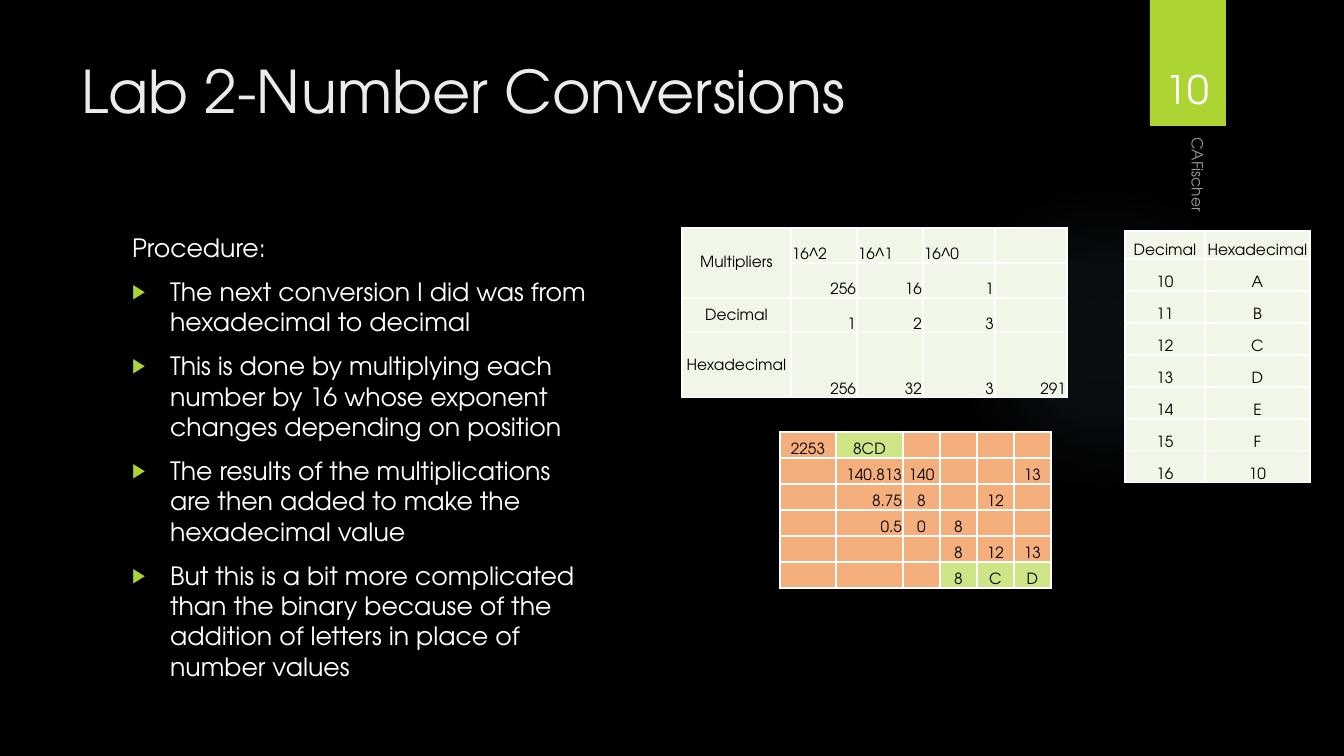
import dataclasses

import lxml.etree
import pptx
import pptx.dml.color
import pptx.enum.shapes
import pptx.enum.text
import pptx.oxml
import pptx.oxml.ns
import pptx.util

TITLE = "Lab 2-Number Conversions"
LEAD = "Procedure:"
STEPS = [
    "The next conversion I did was from hexadecimal to decimal",
    "This is done by multiplying each number by 16 whose exponent changes depending on position",
    "The results of the multiplications are then added to make the hexadecimal value",
    "But this is a bit more complicated than the binary because of the addition of letters in place of number values",
]
AUTHOR = "CAFischer"
PAGE_NUMBER = "10"


@dataclasses.dataclass(frozen=True)
class Theme:
    font: str = "TeX Gyre Adventor"
    background: str = "000000"
    title: str = "EBEBEB"
    text: str = "FFFFFF"
    accent: str = "ACD433"
    glow: str = "7AC4F0"
    cell_text: str = "000000"
    cell_border: str = "FFFFFF"
    pale: str = "F1F7E8"
    orange: str = "F5AF7C"
    highlight: str = "CDE585"
    title_size: int = 42
    number_size: int = 28
    body_size: int = 18
    small_size: int = 11


THEME = Theme()

TABLES = [
    {
        "left": 682, "top": 228,
        "columns": [109, 66, 66, 72, 72], "rows": [35, 35, 35, 65],
        "fill": THEME.pale, "highlights": [], "merges": [((0, 0), (1, 0))],
        "alignment": ["cllll", "crrrr", "crrrr", "crrrr"],
        "middle_columns": [0],
        "cells": [
            ["Multipliers", "16^2", "16^1", "16^0", ""],
            ["", "256", "16", "1", ""],
            ["Decimal", "1", "2", "3", ""],
            ["Hexadecimal", "256", "32", "3", "291"],
        ],
    },
    {
        "left": 1125, "top": 231,
        "columns": [80, 105], "rows": [28] + [32] * 7,
        "fill": THEME.pale, "highlights": [], "merges": [],
        "alignment": ["cc"] * 8,
        "middle_columns": [],
        "cells": [
            ["Decimal", "Hexadecimal"],
            ["10", "A"],
            ["11", "B"],
            ["12", "C"],
            ["13", "D"],
            ["14", "E"],
            ["15", "F"],
            ["16", "10"],
        ],
    },
    {
        "left": 780, "top": 432,
        "columns": [56, 67] + [37] * 4, "rows": [26] * 6,
        "fill": THEME.orange,
        "highlights": [(0, 1), (5, 3), (5, 4), (5, 5)], "merges": [],
        "alignment": ["cccccc"] + ["crcccc"] * 5,
        "middle_columns": [],
        "cells": [
            ["2253", "8CD", "", "", "", ""],
            ["", "140.813", "140", "", "", "13"],
            ["", "8.75", "8", "", "12", ""],
            ["", "0.5", "0", "8", "", ""],
            ["", "", "", "8", "12", "13"],
            ["", "", "", "8", "C", "D"],
        ],
    },
]

PIXELS_PER_INCH = 100.8
ALIGN = pptx.enum.text.PP_ALIGN
ANCHOR = pptx.enum.text.MSO_ANCHOR
SHAPE = pptx.enum.shapes.MSO_SHAPE
ALIGNMENTS = {"l": ALIGN.LEFT, "c": ALIGN.CENTER, "r": ALIGN.RIGHT}
qn = pptx.oxml.ns.qn


def px(length):
    return pptx.util.Emu(round(length * 914400 / PIXELS_PER_INCH))


def rgb(color):
    return pptx.dml.color.RGBColor.from_string(color)


def add_element(parent, tag, **attributes):
    return lxml.etree.SubElement(parent, qn(tag), attributes)


def place(shape, left, top, width, height):
    shape.left, shape.top, shape.width, shape.height = map(px, (left, top, width, height))


def format_runs(paragraph, size, color):
    for run in paragraph.runs:
        run.font.name = THEME.font
        run.font.size = pptx.util.Pt(size)
        run.font.color.rgb = rgb(color)


def add_plain_shape(slide, kind, *box):
    shape = slide.shapes.add_shape(kind, *map(px, box))
    shape.shadow.inherit = False
    shape.line.fill.background()
    return shape


def add_glow(slide):
    glow = add_plain_shape(slide, SHAPE.OVAL, 949, 184, 310, 310)
    gradient = pptx.oxml.parse_xml(
        f'<a:gradFill {pptx.oxml.ns.nsdecls("a")} rotWithShape="1"><a:gsLst/></a:gradFill>')
    for position, opacity in [(0, 7), (36, 6), (69, 0), (100, 0)]:
        stop = add_element(gradient[0], "a:gs", pos=str(position * 1000))
        color = add_element(stop, "a:srgbClr", val=THEME.glow)
        add_element(color, "a:alpha", val=str(opacity * 1000))
    circle = add_element(gradient, "a:path", path="circle")
    add_element(circle, "a:fillToRect", l="50000", t="50000", r="50000", b="50000")
    glow._element.spPr.find(qn("a:prstGeom")).addnext(gradient)


def add_label(slide, text, size, alignment, *box):
    label = slide.shapes.add_textbox(*map(px, box))
    frame = label.text_frame
    frame.word_wrap = True
    frame.margin_left = frame.margin_right = 0
    frame.vertical_anchor = ANCHOR.BOTTOM
    frame.text = text
    frame.paragraphs[0].alignment = alignment
    format_runs(frame.paragraphs[0], size, THEME.text)
    return label


def fill_title(title):
    place(title, 71, 50, 1037, 154)
    frame = title.text_frame
    frame.text = TITLE
    frame.auto_size = pptx.enum.text.MSO_AUTO_SIZE.NONE
    frame.vertical_anchor = ANCHOR.TOP
    frame.paragraphs[0].alignment = ALIGN.LEFT
    format_runs(frame.paragraphs[0], THEME.title_size, THEME.title)


def fill_body(body):
    place(body, 122, 227, 485, 463)
    frame = body.text_frame
    frame.text = "\n".join([LEAD] + STEPS)
    frame.auto_size = pptx.enum.text.MSO_AUTO_SIZE.NONE
    for index, paragraph in enumerate(frame.paragraphs):
        properties = paragraph._p.get_or_add_pPr()
        indent = px(38) if index else 0
        properties.set("marL", str(indent))
        properties.set("indent", str(-indent))
        paragraph.space_before = pptx.util.Pt(10 if index else 0)
        if index:
            color = add_element(properties, "a:buClr")
            add_element(color, "a:srgbClr", val=THEME.accent)
            add_element(properties, "a:buSzPct", val="80000")
            add_element(properties, "a:buChar", char="▶")
        else:
            add_element(properties, "a:buNone")
        format_runs(paragraph, THEME.body_size, THEME.text)


def format_cell(cell, text, alignment, anchor, color):
    cell.margin_left = cell.margin_right = cell.margin_top = px(1)
    cell.margin_bottom = 0
    cell.vertical_anchor = anchor
    paragraph = cell.text_frame.paragraphs[0]
    paragraph.alignment = alignment
    if text:
        paragraph.add_run().text = text
        format_runs(paragraph, THEME.small_size, THEME.cell_text)
    else:
        add_element(paragraph._p, "a:endParaRPr", sz=str(THEME.small_size * 100))
    properties = cell._tc.get_or_add_tcPr()
    for side in ("a:lnL", "a:lnR", "a:lnT", "a:lnB"):
        line = add_element(properties, side, w=str(pptx.util.Pt(1)))
        add_element(add_element(line, "a:solidFill"), "a:srgbClr", val=THEME.cell_border)
    cell.fill.solid()
    cell.fill.fore_color.rgb = rgb(color)


def add_number_table(slide, data):
    columns, rows = data["columns"], data["rows"]
    box = (data["left"], data["top"], sum(columns), sum(rows))
    table = slide.shapes.add_table(len(rows), len(columns), *map(px, box)).table
    table.first_row = table.horz_banding = False
    for column, width in zip(table.columns, columns):
        column.width = px(width)
    for row, height in zip(table.rows, rows):
        row.height = px(height)
    for r, texts in enumerate(data["cells"]):
        for c, text in enumerate(texts):
            anchor = ANCHOR.MIDDLE if c in data["middle_columns"] else ANCHOR.BOTTOM
            color = THEME.highlight if (r, c) in data["highlights"] else data["fill"]
            format_cell(table.cell(r, c), text, ALIGNMENTS[data["alignment"][r][c]], anchor, color)
    for first, last in data["merges"]:
        table.cell(*first).merge(table.cell(*last))


def main():
    presentation = pptx.Presentation()
    presentation.slide_width, presentation.slide_height = px(1344), px(756)
    slide = presentation.slides.add_slide(presentation.slide_layouts[1])
    slide.background.fill.solid()
    slide.background.fill.fore_color.rgb = rgb(THEME.background)
    add_glow(slide)
    tab = add_plain_shape(slide, SHAPE.RECTANGLE, 1150, 0, 76, 126)
    tab.fill.solid()
    tab.fill.fore_color.rgb = rgb(THEME.accent)
    fill_title(slide.shapes.title)
    fill_body(slide.placeholders[1])
    for data in TABLES:
        add_number_table(slide, data)
    author = add_label(slide, AUTHOR, THEME.small_size, ALIGN.LEFT, 1155, 166, 90, 33)
    author.rotation = 90
    color = next(author._element.iter(qn("a:srgbClr")))
    add_element(color, "a:alpha", val="60000")
    add_label(slide, PAGE_NUMBER, THEME.number_size, ALIGN.CENTER, 1141, 32, 93, 85)
    presentation.save("out.pptx")


if __name__ == "__main__":
    main()
